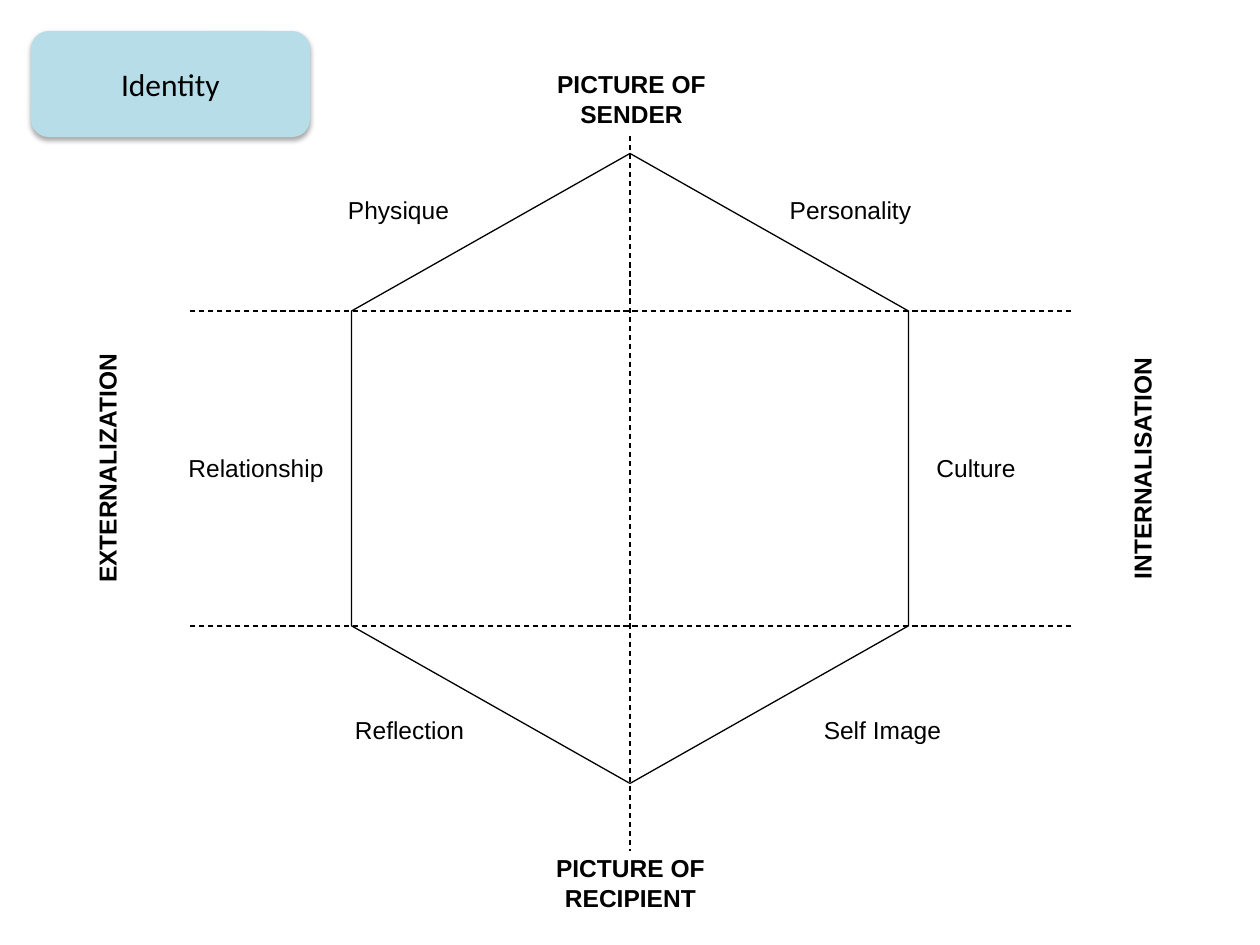
import pptx
import pptx.util
import pptx.dml.color
import pptx.enum.dml
import pptx.enum.shapes
import pptx.enum.text
import pptx.oxml
import pptx.oxml.ns
import lxml.etree

SCALE = 914400 / 126
BLACK = pptx.dml.color.RGBColor(0, 0, 0)
AQUA = pptx.dml.color.RGBColor(0xB7, 0xDE, 0xE8)
KIND = pptx.enum.shapes.MSO_SHAPE
ALIGN = pptx.enum.text.PP_ALIGN
NS = pptx.oxml.ns.nsdecls("a")


def px(*nums):
    return [pptx.util.Emu(round(num * SCALE)) for num in nums]


def write(frame, text, side, font, size, bold):
    para = frame.paragraphs[0]
    para.alignment = side
    run = para.add_run()
    run.text = text
    run.font.name = font
    run.font.size = pptx.util.Pt(size)
    run.font.bold = bold
    run.font.color.rgb = BLACK


deck = pptx.Presentation()
deck.slide_width, deck.slide_height = px(1260, 945)
slide = deck.slides.add_slide(deck.slide_layouts[6])
prism = slide.shapes.add_group_shape()

hexa = prism.shapes.add_shape(KIND.HEXAGON, *px(315, 190, 630, 557))
hexa.adjustments[0] = 0.283
hexa.adjustments[1] = 1.155
hexa.rotation = 90
hexa.shadow.inherit = False
hexa.fill.background()
hexa.line.color.rgb = BLACK
hexa.line.width = pptx.util.Pt(0.75)

axes = [
    (630, 136, 630, 851),
    (1071, 311, 189, 311),
    (1071, 626, 189, 626),
]
for ends in axes:
    axis = prism.shapes.add_connector(
        pptx.enum.shapes.MSO_CONNECTOR.STRAIGHT, *px(*ends))
    axis.line.color.rgb = BLACK
    axis.line.width = pptx.util.Pt(0.75)
    axis.line.dash_style = pptx.enum.dml.MSO_LINE.DASH
    lxml.etree.SubElement(axis._element.spPr, pptx.oxml.ns.qn("a:effectLst"))

labels = [
    ("PICTURE OF RECIPIENT", 494, 847, 72, ALIGN.CENTER, True, 0),
    ("PICTURE OF SENDER", 495, 63, 72, ALIGN.CENTER, True, 0),
    ("Self Image", 746, 709, 43, ALIGN.CENTER, False, 0),
    ("Reflection", 273, 709, 43, ALIGN.CENTER, False, 0),
    ("Physique", 262, 189, 43, ALIGN.CENTER, False, 0),
    ("Personality", 714, 189, 43, ALIGN.CENTER, False, 0),
    ("Relationship", 63, 447, 43, ALIGN.RIGHT, False, 0),
    ("Culture", 924, 447, 43, ALIGN.LEFT, False, 0),
    ("INTERNALISATION", 1006, 447, 43, ALIGN.CENTER, True, 270),
    ("EXTERNALIZATION", -29, 447, 43, ALIGN.CENTER, True, 270),
]
for text, left, top, high, side, bold, turn in labels:
    box = prism.shapes.add_textbox(*px(left, top, 273, high))
    box.rotation = turn
    frame = box.text_frame
    frame.word_wrap = True
    frame.auto_size = pptx.enum.text.MSO_AUTO_SIZE.SHAPE_TO_FIT_TEXT
    write(frame, text, side, "Arial", 14, bold)

badge = slide.shapes.add_shape(KIND.ROUNDED_RECTANGLE, *px(31, 31, 279, 106))
badge.adjustments[0] = 0.167
badge.fill.solid()
badge.fill.fore_color.rgb = AQUA
badge.line.fill.background()
badge._element.spPr.append(pptx.oxml.parse_xml(
    f'<a:effectLst {NS}><a:outerShdw blurRad="39370" dist="22860" '
    'dir="5400000" rotWithShape="0"><a:srgbClr val="000000">'
    '<a:alpha val="35000"/></a:srgbClr></a:outerShdw></a:effectLst>'))
frame = badge.text_frame
frame.word_wrap = False
frame.vertical_anchor = pptx.enum.text.MSO_ANCHOR.MIDDLE
for edge in ("left", "top", "right", "bottom"):
    setattr(frame, f"margin_{edge}", px(6)[0])
write(frame, "Identity", ALIGN.CENTER, "Calibri", 18, False)

deck.save("out.pptx")
